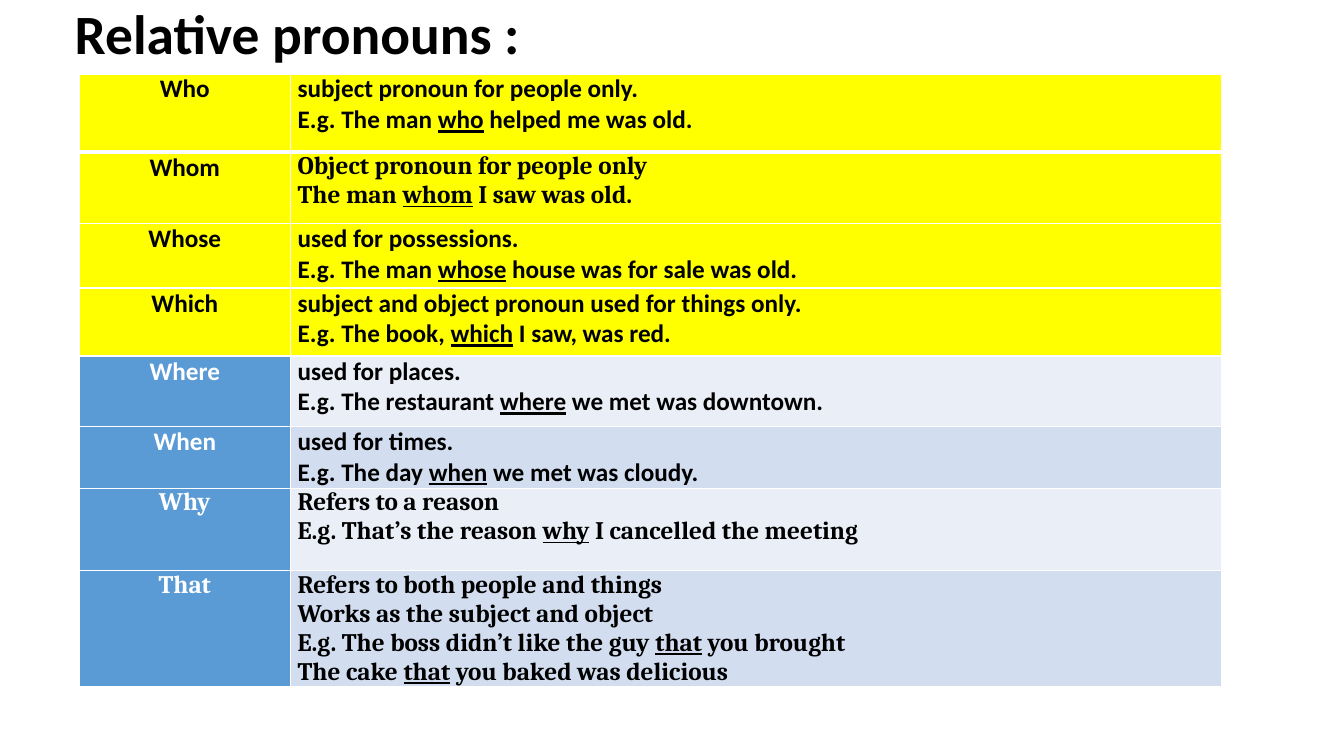
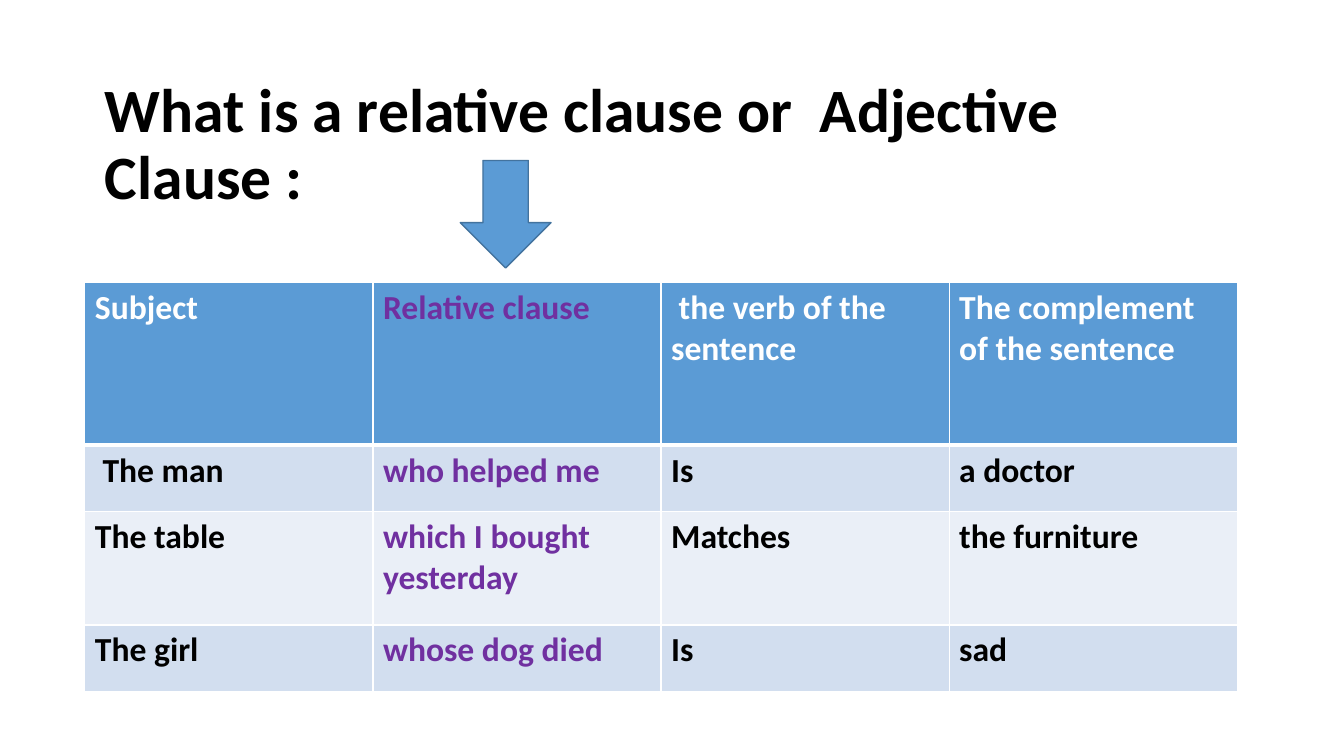
from dataclasses import dataclass

from lxml import etree
from pptx import Presentation
from pptx import util as u
from pptx.dml.color import RGBColor
from pptx.enum import shapes, text
from pptx.oxml import ns


@dataclass(frozen=True)
class Theme:
    """Colours, fonts and type sizes of the lesson."""
    sans: str = "Calibri"
    serif: str = "Cambria"
    ink: str = "000000"
    white: str = "FFFFFF"
    accent: str = "5B9BD5"
    outline: str = "43739E"
    clause: str = "7030A0"
    highlight: str = "FFFF00"
    bands: tuple = ("EAEFF7", "D2DEEF")
    rule: float = 1
    heavy_rule: float = 3
    definition: float = 18
    example: float = 24
    small_title: float = 39.6
    title: float = 44


class Lesson:
    """Draws lesson slides on a grid of 160 columns by 90 rows."""

    def __init__(self, theme):
        """Start an empty widescreen presentation."""
        self.theme = theme
        self.deck = Presentation()
        self.deck.slide_width, self.deck.slide_height = u.Inches(13.33), u.Inches(7.5)
        self.slide = None

    def across(self, columns):
        """Turn grid columns into a length."""
        return u.Emu(round(self.deck.slide_width * columns / 160))

    def down(self, rows):
        """Turn grid rows into a length."""
        return u.Emu(round(self.deck.slide_height * rows / 90))

    def box(self, left, top, width, height):
        """Turn a grid rectangle into lengths."""
        return self.across(left), self.down(top), self.across(width), self.down(height)

    def style(self, font, size, color, face=None):
        """Apply the bold lesson type to a font."""
        font.name, font.size, font.bold = face or self.theme.sans, u.Pt(size), True
        font.color.rgb = RGBColor.from_string(color)

    def titled_slide(self, words, place, size):
        """Add a slide with a left-aligned title."""
        self.slide = self.deck.slides.add_slide(self.deck.slide_layouts[5])
        title = self.slide.shapes.title
        title.left, title.top, title.width, title.height = self.box(*place)
        frame = title.text_frame
        frame.text = words
        frame.auto_size = text.MSO_AUTO_SIZE.NONE
        frame.vertical_anchor = text.MSO_ANCHOR.MIDDLE
        heading = frame.paragraphs[0]
        heading.alignment, heading.line_spacing = text.PP_ALIGN.LEFT, 0.9
        self.style(heading.runs[0].font, size, self.theme.ink)

    def table(self, left, top, columns, rows):
        """Add an empty table with the given column widths and row heights."""
        place = self.box(left, top, sum(columns), sum(rows))
        grid = self.slide.shapes.add_table(len(rows), len(columns), *place).table
        for column, width in zip(grid.columns, columns):
            column.width = self.across(width)
        for row, height in zip(grid.rows, rows):
            row.height = self.down(height)
        for number, row in enumerate(grid.rows):
            for cell in row.cells:
                self.borders(cell, number)
        return grid

    def borders(self, cell, row):
        """Rule a cell in white, heavier between the first two rows."""
        thin, heavy = self.theme.rule, self.theme.heavy_rule
        weights = {"L": thin, "R": thin,
                   "T": heavy if row == 1 else thin,
                   "B": heavy if row == 0 else thin}
        properties = cell._tc.get_or_add_tcPr()
        for side, weight in weights.items():
            line = etree.SubElement(properties, ns.qn(f"a:ln{side}"), w=str(u.Pt(weight)))
            fill = etree.SubElement(line, ns.qn("a:solidFill"))
            etree.SubElement(fill, ns.qn("a:srgbClr"), val=self.theme.white)

    def fill_cell(self, cell, words, fill, color, size, face=None, align=text.PP_ALIGN.LEFT):
        """Fill a cell with text, underlining what stands between underscores."""
        cell.fill.solid()
        cell.fill.fore_color.rgb = RGBColor.from_string(fill)
        cell.text_frame.text = words
        for paragraph in cell.text_frame.paragraphs:
            pieces = paragraph.text.split("_")
            paragraph.text = pieces[0]
            paragraph.alignment = align
            for piece in pieces[1:]:
                paragraph.add_run().text = piece
            for number, run in enumerate(paragraph.runs):
                self.style(run.font, size, color, face)
                run.font.underline = number % 2 == 1

    def down_arrow(self, *place):
        """Add an arrow pointing down."""
        arrow = self.slide.shapes.add_shape(shapes.MSO_SHAPE.DOWN_ARROW, *self.box(*place))
        arrow.shadow.inherit = False
        arrow.fill.solid()
        arrow.fill.fore_color.rgb = RGBColor.from_string(self.theme.accent)
        arrow.line.color.rgb = RGBColor.from_string(self.theme.outline)
        arrow.line.width = u.Pt(self.theme.rule)


def pronouns_slide(lesson):
    """Build the list of relative pronouns."""
    theme = lesson.theme
    sans, serif = theme.sans, theme.serif
    pronouns = [
        ("Who", sans, sans, 9.3,
         "subject pronoun for people only.\nE.g. The man _who_ helped me was old."),
        ("Whom", sans, serif, 8.5,
         "Object pronoun for people only\nThe man _whom_ I saw was old."),
        ("Whose", sans, sans, 7.7,
         "used for possessions.\nE.g. The man _whose_ house was for sale was old."),
        ("Which", sans, sans, 8.1,
         "subject and object pronoun used for things only.\n"
         "E.g. The book, _which_ I saw, was red."),
        ("Where", sans, sans, 8.4,
         "used for places.\nE.g. The restaurant _where_ we met was downtown."),
        ("When", sans, sans, 7.2,
         "used for times.\nE.g. The day _when_ we met was cloudy."),
        ("Why", serif, serif, 9.8,
         "Refers to a reason\nE.g. That’s the reason _why_ I cancelled the meeting"),
        ("That", serif, serif, 13.8,
         "Refers to both people and things\nWorks as the subject and object\n"
         "E.g. The boss didn’t like the guy _that_ you brought\n"
         "The cake _that_ you baked was delicious"),
    ]
    lesson.titled_slide("Relative pronouns :", (7.7, 0, 122.9, 8.8), theme.small_title)
    grid = lesson.table(9.4, 8.8, (25.2, 110.8), [entry[3] for entry in pronouns])
    grid.first_col = True
    for number, (pronoun, face, use_face, _, use) in enumerate(pronouns):
        if number < 4:
            key_fill, key_color, use_fill = theme.highlight, theme.ink, theme.highlight
        else:
            key_fill, key_color, use_fill = theme.accent, theme.white, theme.bands[number % 2]
        key_cell, use_cell = grid.rows[number].cells
        for cell in (key_cell, use_cell):
            cell.margin_left = cell.margin_right = u.Inches(0.07)
            cell.margin_top = cell.margin_bottom = 0
        lesson.fill_cell(key_cell, pronoun, key_fill, key_color, theme.definition, face,
                         text.PP_ALIGN.CENTER)
        lesson.fill_cell(use_cell, use, use_fill, theme.ink, theme.definition, use_face)


def clause_slide(lesson):
    """Build the sentence parts around a relative clause."""
    theme = lesson.theme
    sentences = [
        ("Subject", "Relative clause", " the verb of the sentence",
         "The complement of the sentence"),
        (" The man", "who helped me", "Is", "a doctor"),
        ("The table", "which I bought yesterday", "Matches", "the furniture"),
        ("The girl", "whose dog died", "Is", "sad"),
    ]
    lesson.titled_slide("What is a relative clause or  Adjective Clause :",
                        (11.3, 8.8, 129.8, 17.2), theme.title)
    grid = lesson.table(10.1, 33.6, [34.3] * 4, (19.4, 7.9, 13.5, 7.9))
    for number, sentence in enumerate(sentences):
        fill = theme.bands[number % 2] if number else theme.accent
        plain = theme.ink if number else theme.white
        for column, part in enumerate(sentence):
            color = theme.clause if column == 1 else plain
            lesson.fill_cell(grid.cell(number, column), part, fill, color, theme.example)
    lesson.down_arrow(54.8, 19.1, 10.8, 12.8)


def main():
    """Build and save the lesson."""
    lesson = Lesson(Theme())
    pronouns_slide(lesson)
    clause_slide(lesson)
    lesson.deck.save("out.pptx")


if __name__ == "__main__":
    main()
